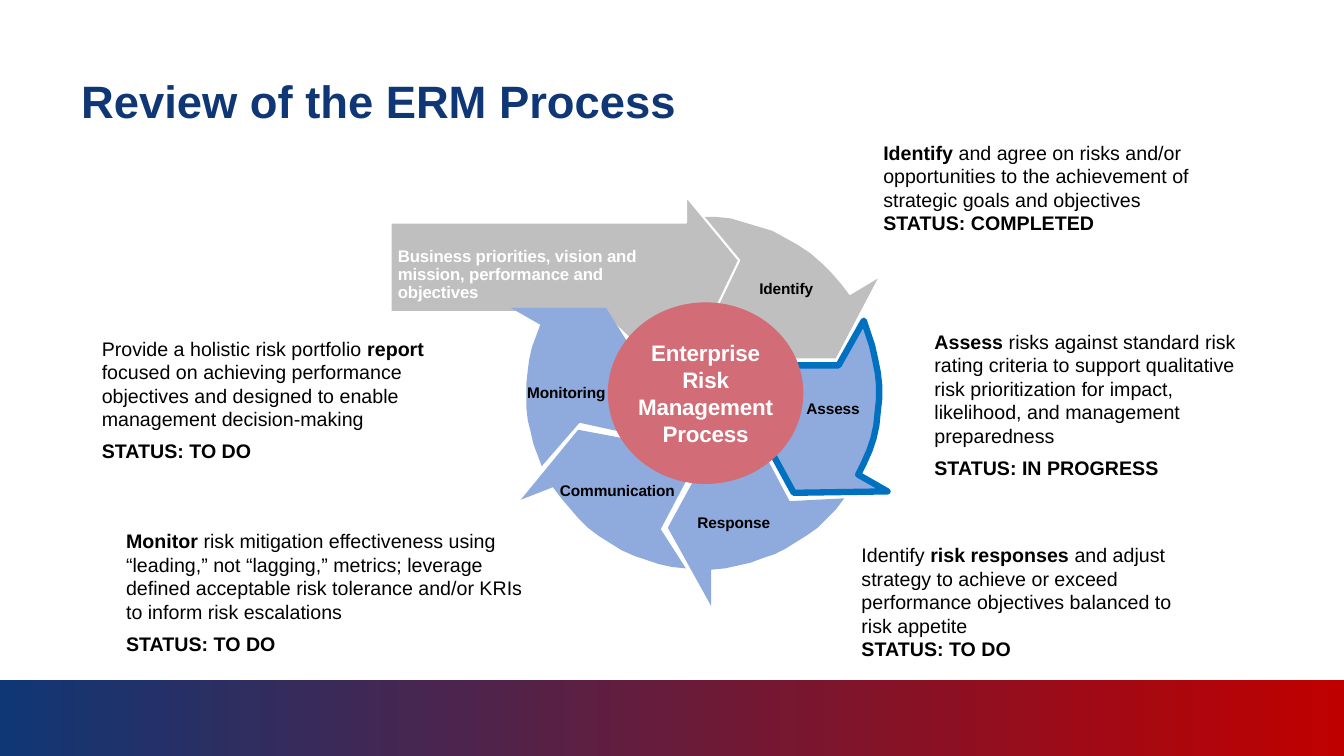
from dataclasses import dataclass
from math import cos, radians, sin

from lxml.etree import SubElement
from pptx import Presentation
from pptx.dml.color import RGBColor as Rgb
from pptx.enum.shapes import MSO_SHAPE as Preset
from pptx.enum.text import MSO_ANCHOR as Anchor, PP_ALIGN as Align
from pptx.oxml.ns import qn
from pptx.util import Pt


@dataclass(frozen=True)
class Theme:
    font: str = "Arial"
    navy: str = "103775"
    red: str = "C00000"
    black: str = "000000"
    white: str = "FFFFFF"
    done: str = "BFBFBF"
    ahead: str = "8FAADC"
    outline: str = "0070C0"
    hub: str = "D26C76"
    title_size: float = 32.4
    hub_size: float = 16
    note_size: float = 14
    intro_size: float = 12
    label_size: float = 11


THEME = Theme()
WIDTH, HEIGHT, BAND_TOP = 960, 540, 486

# The process wheel: arcs run clockwise from east, in degrees
CENTER_X, CENTER_Y = 501.8, 280.8
OUTER, INNER = 126, 62


def arc(radius, start, end, steps=12):
    angles = [radians(start + (end - start) * i / steps) for i in range(steps + 1)]
    return [(CENTER_X + radius * cos(a), CENTER_Y + radius * sin(a)) for a in angles]


# Outline, fill, line colour and line width of each arrow, back to front
ARROWS = [
    ([(530, 255.6), (596.9, 255.6), (627.1, 199.4), *arc(OUTER, -33.6, -90),
      (525.6, 183.6), *arc(INNER, -81.6, -37.1)], THEME.done, None, 0),
    ([(279.4, 223.2), (429.8, 223.2), *arc(INNER, 216.6, 267.5), (502.6, 237.6),
      (527.8, 185.8), (490.3, 140.4), (490.3, 159.1), (279.4, 159.1)],
     THEME.done, THEME.white, 1.5),
    ([(567.4, 352.1), (633.6, 351.4), *arc(OUTER, 27.7, -24.1), (599, 261.4),
      *arc(INNER, -18.9, 25.4), (537.1, 296.6)], THEME.ahead, THEME.outline, 4.5),
    ([(477.4, 376.6), (508.3, 432.7), *arc(OUTER, 87, 36.9), (564.5, 357.8),
      *arc(INNER, 44, 84), (508.3, 320.4)], THEME.ahead, None, 0),
    ([(413.3, 306.7), (371.5, 357.1), *arc(OUTER, 147.8, 95.5), (472.3, 378),
      *arc(INNER, 99.8, 134.5), (476.6, 319)], THEME.ahead, None, 0),
    ([(432.7, 220.3), (365, 220.3), *arc(OUTER, 202.9, 155.6), (414, 301.7),
      *arc(INNER, 153.4, 196.2), (468, 276.5)], THEME.ahead, None, 0),
]

# Label and the middle of its box
LABELS = [
    ("Communication", 441, 350.6),
    ("Assess", 595.1, 292),
    ("Monitoring", 404.6, 280.4),
    ("Identify", 561.6, 206.3),
    ("Response", 524.2, 373.3),
]

# Box, space between paragraphs, and paragraphs of (text, bold) spans
TO_DO = [("STATUS: TO DO", True)]
NOTES = [
    ((627.1, 93.6, 244.8, 78.5), 6, [
        [("Identify", True),
         (" and agree on risks and/or opportunities to the achievement of "
          "strategic goals and objectives ", False),
         ("STATUS: COMPLETED", True)]]),
    ((662.4, 227.5, 246.2, 103.7), 6, [
        [("Assess ", True),
         ("risks against standard risk rating criteria to support qualitative risk "
          "prioritization for impact, likelihood, and management preparedness", False)],
        [("STATUS: IN PROGRESS", True)]]),
    ((610.6, 380.2, 246.2, 97.2), 0, [
        [("Identify ", False), ("risk responses", True),
         (" and adjust strategy to achieve or exceed performance objectives "
          "balanced to risk appetite", False)],
        TO_DO]),
    ((85, 370.1, 303.1, 103.7), 6, [
        [("Monitor", True),
         (" risk mitigation effectiveness using “leading,” not “lagging,” metrics; "
          "leverage defined acceptable risk tolerance and/or KRIs to inform risk "
          "escalations", False)],
        TO_DO]),
    ((67.7, 232.6, 283, 103.7), 6, [
        [("Provide a holistic risk portfolio", False), (" report ", True),
         ("focused on achieving performance objectives and designed to enable "
          "management decision-making", False)],
        TO_DO]),
]


def set_all(target, values):
    for name, value in values.items():
        setattr(target, name, value)


def paint(shape, fill=None, line=None, width=0):
    shape.shadow.inherit = False
    if fill:
        shape.fill.solid()
        shape.fill.fore_color.rgb = Rgb.from_string(fill)
    else:
        shape.fill.background()
    if line:
        set_all(shape.line, {"width": Pt(width)})
        shape.line.color.rgb = Rgb.from_string(line)
        SubElement(shape.line._get_or_add_ln(), qn("a:round"))
    else:
        shape.line.fill.background()


def write(box, paragraphs, size, color, insets=(0, 0, 0, 0), anchor=Anchor.TOP,
          align=Align.LEFT, gap=0, line_spacing=None, tracking=None):
    frame = box.text_frame
    sides = ("margin_left", "margin_top", "margin_right", "margin_bottom")
    set_all(frame, {"word_wrap": True, "vertical_anchor": anchor,
                    **{side: Pt(inset) for side, inset in zip(sides, insets)}})
    for index, spans in enumerate(paragraphs):
        para = frame.add_paragraph() if index else frame.paragraphs[0]
        set_all(para, {"alignment": align, "line_spacing": line_spacing,
                       "space_before": Pt(gap if index else 0)})
        for text, bold in spans:
            span = para.add_run()
            span.text = text
            set_all(span.font, {"name": THEME.font, "size": Pt(size), "bold": bold})
            span.font.color.rgb = Rgb.from_string(color)
            if tracking:
                span._r.get_or_add_rPr().set("spc", str(tracking))


def add_band(page):
    band = page.shapes.add_shape(Preset.RECTANGLE, 0, Pt(BAND_TOP),
                                 Pt(WIDTH), Pt(HEIGHT - BAND_TOP))
    paint(band)
    band.fill.gradient()
    band.fill.gradient_angle = 0
    for stop, color in zip(band.fill.gradient_stops, (THEME.navy, THEME.red)):
        stop.color.rgb = Rgb.from_string(color)


def add_title(page, text):
    box = page.shapes.add_textbox(Pt(58), Pt(53.3), Pt(872), Pt(52.6))
    write(box, [[(text, True)]], THEME.title_size, THEME.navy, line_spacing=Pt(38))


def add_note(page, place, gap, paragraphs):
    box = page.shapes.add_shape(Preset.ROUNDED_RECTANGLE, *map(Pt, place))
    paint(box)
    write(box, paragraphs, THEME.note_size, THEME.black, (0, 2.9, 0, 0), gap=gap)


def add_arrow(wheel, outline, fill, line, width):
    builder = wheel.shapes.build_freeform(*outline[0], scale=Pt(1))
    builder.add_line_segments(outline[1:], close=True)
    paint(builder.convert_to_shape(), fill, line, width)


def add_label(wheel, text, middle_x, middle_y, width=100, height=22, **style):
    box = wheel.shapes.add_textbox(Pt(middle_x - width / 2), Pt(middle_y - height / 2),
                                   Pt(width), Pt(height))
    look = {"size": THEME.label_size, "color": THEME.black, "align": Align.CENTER}
    write(box, [[(text, True)]], insets=(2.2, 3.6, 2.2, 3.6), anchor=Anchor.MIDDLE,
          tracking=-10, **{**look, **style})


def add_hub(wheel, text):
    hub = wheel.shapes.add_shape(Preset.OVAL, Pt(434.9), Pt(216.7), Pt(138.2), Pt(128.2))
    paint(hub, THEME.hub, THEME.hub, 1.5)
    write(hub, [[(text, True)]], THEME.hub_size, THEME.white, anchor=Anchor.MIDDLE,
          align=Align.CENTER, tracking=-10)


def main():
    deck = Presentation()
    set_all(deck, {"slide_width": Pt(WIDTH), "slide_height": Pt(HEIGHT)})
    page = deck.slides.add_slide(deck.slide_layouts[6])

    # Band, title and notes
    add_band(page)
    add_title(page, "Review of the ERM Process")
    for note in NOTES:
        add_note(page, *note)

    # Wheel of arrows around the hub
    wheel = page.shapes.add_group_shape()
    for arrow in ARROWS:
        add_arrow(wheel, *arrow)
    for label in LABELS:
        add_label(wheel, *label)
    add_label(wheel, "Business priorities, vision and mission, performance and objectives",
              374, 196.2, width=184, height=50, size=THEME.intro_size,
              color=THEME.white, align=Align.LEFT, line_spacing=0.9)
    add_hub(wheel, "Enterprise Risk Management Process")

    deck.save("out.pptx")


if __name__ == "__main__":
    main()
